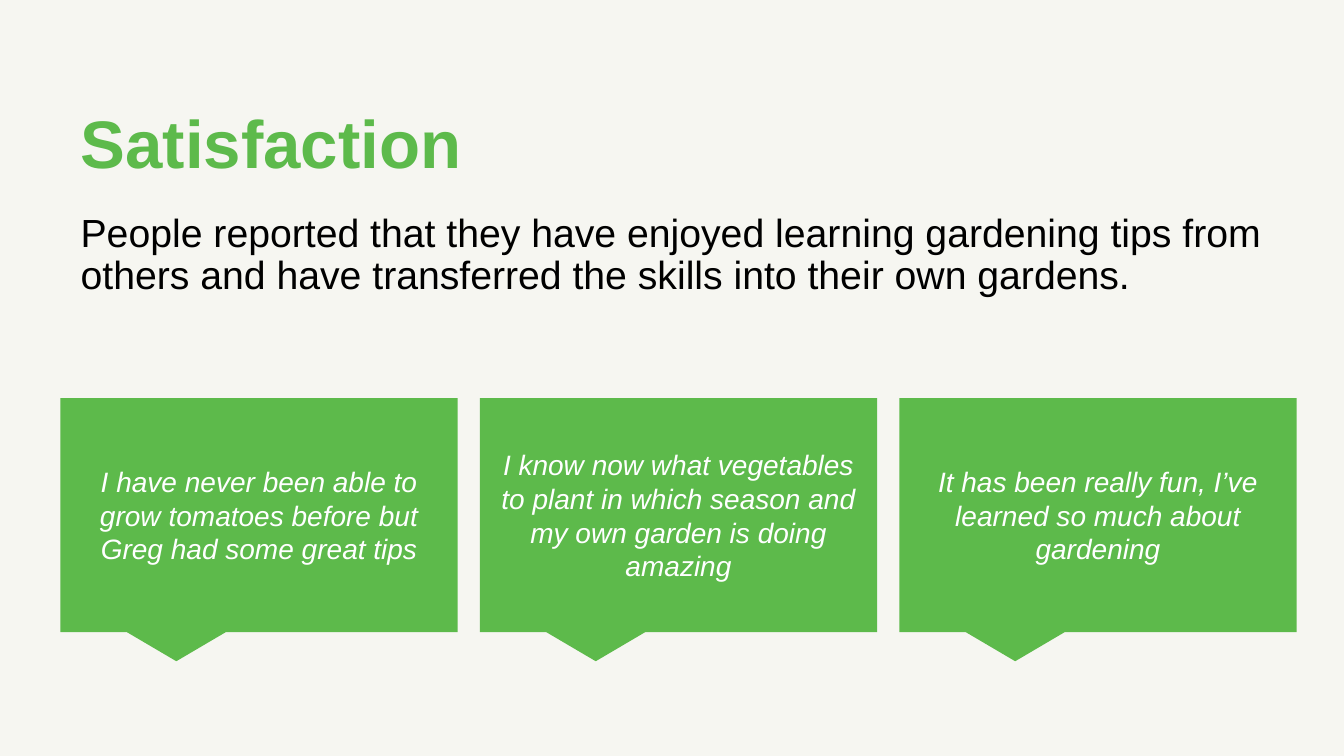
from pptx import Presentation
from pptx.dml.color import RGBColor
from pptx.enum.shapes import MSO_SHAPE
from pptx.enum.text import MSO_ANCHOR, MSO_AUTO_SIZE, PP_ALIGN
from pptx.util import Inches, Pt
from lxml.etree import SubElement
from pptx.oxml.ns import qn

GREEN = "5DBA4B"


def paint(fill, tone):
    fill.solid()
    fill.fore_color.rgb = RGBColor.from_string(tone)


def write(shape, text, size, tone, align, anchor):
    frame = shape.text_frame
    frame.text = text
    frame.word_wrap = True
    frame.auto_size = MSO_AUTO_SIZE.NONE
    frame.vertical_anchor = anchor
    para = frame.paragraphs[0]
    para.alignment = align
    para.font.name = "Arial"
    para.font.size = Pt(size)
    paint(para.font.fill, tone)
    return para


deck = Presentation()
deck.slide_width = Inches(13.33)
deck.slide_height = Inches(7.5)
slide = deck.slides.add_slide(deck.slide_layouts[1])
paint(slide.background.fill, "F6F6F1")

title, body = slide.placeholders
for holder, top, height in [(title, 0.42, 1.45), (body, 2.07, 0.76)]:
    holder.left, holder.top = Inches(0.7), Inches(top)
    holder.width, holder.height = Inches(12.15), Inches(height)

head = write(title, "Satisfaction", 48, GREEN, PP_ALIGN.LEFT, MSO_ANCHOR.BOTTOM)
head.font.bold = True
head.line_spacing = 0.9

lead = write(
    body,
    "People reported that they have enjoyed learning gardening tips from "
    "others and have transferred the skills into their own gardens.",
    28, "000000", PP_ALIGN.LEFT, MSO_ANCHOR.TOP,
)
lead.line_spacing = 0.9
lead.space_before = Pt(10)
lead.space_after = Pt(6)
props = lead._p.get_or_add_pPr()
props.set("marL", "0")
props.set("indent", "0")
SubElement(props, qn("a:buNone"))
props.append(props.find(qn("a:defRPr")))

quotes = [
    "I have never been able to grow tomatoes before but Greg had some great tips",
    "I know now what vegetables to plant in which season and my own garden is doing amazing",
    "It has been really fun, I’ve learned so much about gardening",
]
for i, quote in enumerate(quotes):
    bubble = slide.shapes.add_shape(
        MSO_SHAPE.RECTANGULAR_CALLOUT,
        Inches(0.6 + 4.16 * i), Inches(3.95), Inches(3.94), Inches(2.32),
    )
    bubble.shadow.inherit = False
    paint(bubble.fill, GREEN)
    bubble.line.fill.background()
    para = write(bubble, quote, 20, "FFFFFF", PP_ALIGN.CENTER, MSO_ANCHOR.MIDDLE)
    para.font.italic = True

deck.save("out.pptx")
